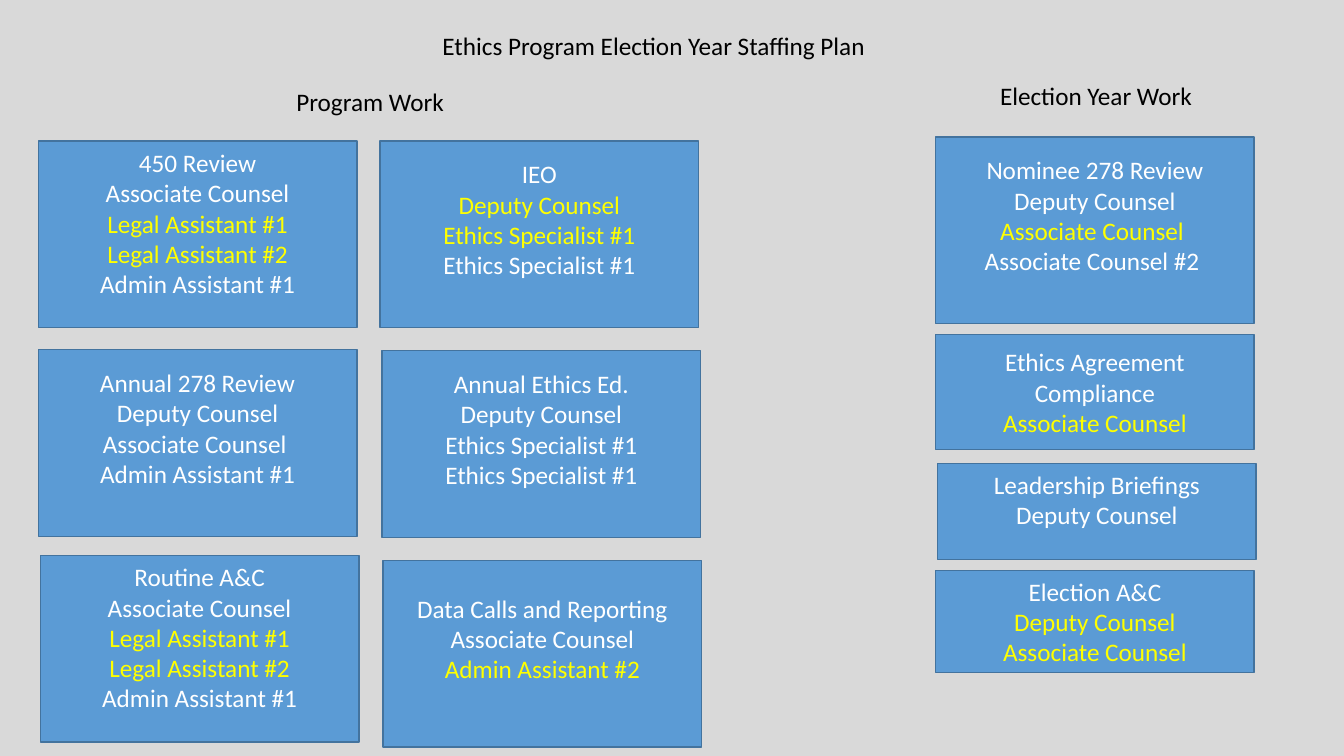
from pptx import Presentation
from pptx import util as u
from pptx.dml.color import RGBColor
from pptx.enum import shapes, text

COLORS = {"back": "D9D9D9", "box": "5B9BD5", "edge": "43739E",
          "dark": "000000", "plain": "FFFFFF", "mark": "FFFF00"}
WIDTH = 3.16
TALL = 1.85
PAD = 0.05
LINE = 0.305

HEADS = [
    (4.29, 0.25, 4.44, "Ethics Program Election Year Staffing Plan"),
    (9.82, 0.75, 2.13, "Election Year Work"),
    (2.84, 0.81, 1.68, "Program Work"),
]

# Left, top, height, space below the text, lines; a leading * marks a yellow line
ROUTINE = ["Associate Counsel", "*Legal Assistant #1",
           "*Legal Assistant #2", "Admin Assistant #1"]
TASKS = [
    (0.38, 1.4, TALL, 0.35, ["450 Review"] + ROUTINE),
    (0.4, 5.51, TALL, 0.35, ["Routine A&C"] + ROUTINE),
    (0.38, 3.47, TALL, 0.35, ["Annual 278 Review", "Deputy Counsel",
                              "Associate Counsel ", "Admin Assistant #1"]),
    (3.77, 1.4, TALL, 0.35, ["IEO", "*Deputy Counsel",
                             "*Ethics Specialist #1", "Ethics Specialist #1"]),
    (3.79, 3.48, TALL, 0.35, ["Annual Ethics Ed.", "Deputy Counsel",
                              "Ethics Specialist #1", "Ethics Specialist #1"]),
    (3.8, 5.56, TALL, 0.35, ["Data Calls and Reporting", "Associate Counsel",
                             "*Admin Assistant #2"]),
    (9.28, 1.36, TALL, 0.35, ["Nominee 278 Review", "Deputy Counsel",
                              "*Associate Counsel ", "Associate Counsel #2 "]),
    (9.28, 3.32, 1.14, PAD, ["Ethics Agreement Compliance", "*Associate Counsel"]),
    (9.3, 4.6, 0.95, 0.35, ["Leadership Briefings", "Deputy Counsel"]),
    (9.28, 5.66, 1.01, PAD, ["Election A&C", "*Deputy Counsel",
                             "*Associate Counsel"]),
]


def color(name):
    return RGBColor.from_string(COLORS[name])


def format(item, values):
    for name, value in values.items():
        setattr(item, name, value)


def write(para, words, shade):
    run = para.add_run()
    run.text = words
    format(run.font, {"name": "Calibri", "size": u.Pt(18)})
    run.font.color.rgb = color(shade)


def add_head(slide, left, top, width, words):
    box = slide.shapes.add_textbox(u.Inches(left), u.Inches(top),
                                   u.Inches(width), u.Inches(0.4))
    format(box.text_frame, {"word_wrap": False,
                            "auto_size": text.MSO_AUTO_SIZE.SHAPE_TO_FIT_TEXT})
    write(box.text_frame.paragraphs[0], words, "dark")


def add_task(slide, left, top, height, below, lines):
    box = slide.shapes.add_shape(shapes.MSO_SHAPE.RECTANGLE, u.Inches(left),
                                 u.Inches(top), u.Inches(WIDTH), u.Inches(height))
    box.shadow.inherit = False
    box.fill.solid()
    box.fill.fore_color.rgb = color("box")
    box.line.color.rgb = color("edge")
    box.line.width = u.Pt(1)
    frame = box.text_frame
    # A full box gives up space below so that its text starts at the top
    room = height - PAD - len(lines) * LINE
    format(frame, {"word_wrap": True,
                   "vertical_anchor": text.MSO_ANCHOR.MIDDLE,
                   "margin_top": u.Inches(PAD),
                   "margin_bottom": u.Inches(min(below, room))})
    for index, line in enumerate(lines):
        para = frame.add_paragraph() if index else frame.paragraphs[0]
        para.alignment = text.PP_ALIGN.CENTER
        write(para, line.lstrip("*"), "mark" if line.startswith("*") else "plain")


def main():
    deck = Presentation()
    format(deck, {"slide_width": u.Inches(13.33), "slide_height": u.Inches(7.5)})
    slide = deck.slides.add_slide(deck.slide_layouts[6])
    slide.background.fill.solid()
    slide.background.fill.fore_color.rgb = color("back")
    for head in HEADS:
        add_head(slide, *head)
    for task in TASKS:
        add_task(slide, *task)
    deck.save("out.pptx")


if __name__ == "__main__":
    main()
